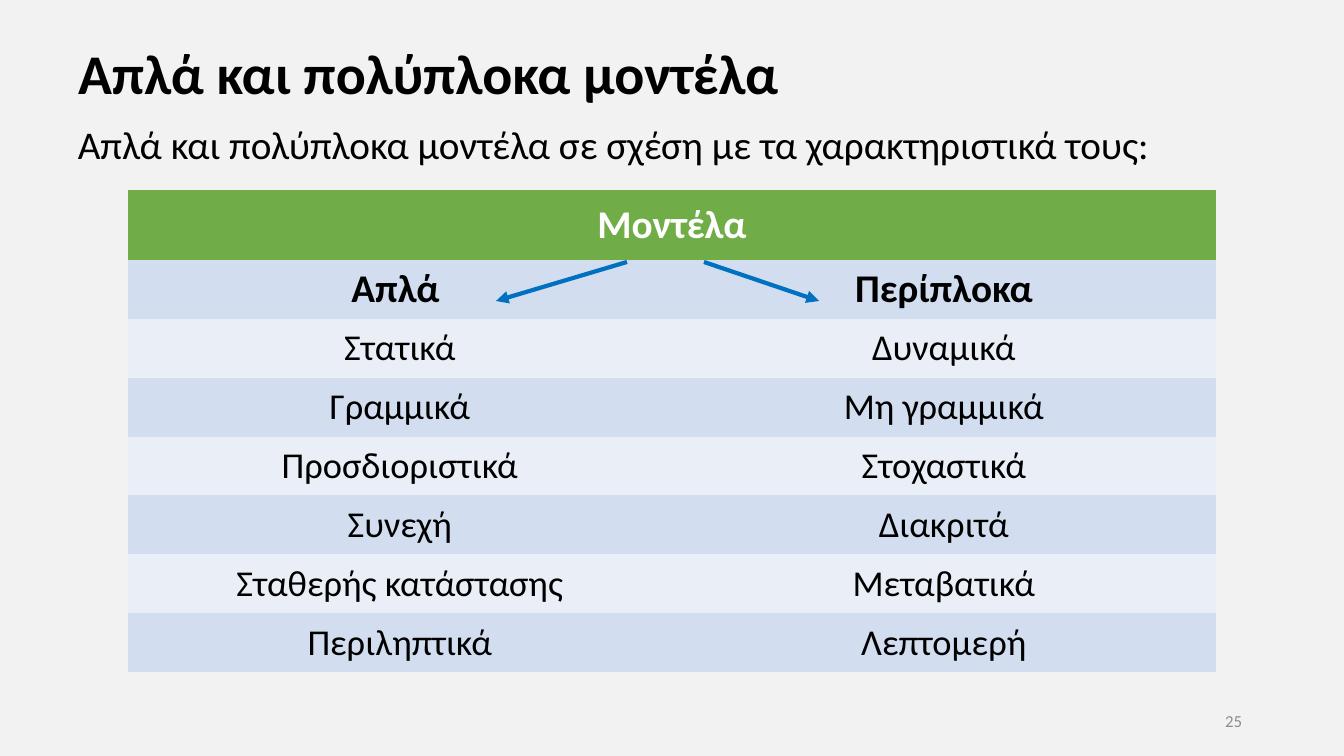
from dataclasses import dataclass

from lxml.etree import SubElement
from pptx import Presentation
from pptx.dml.color import RGBColor
from pptx.enum.shapes import MSO_CONNECTOR
from pptx.enum.text import MSO_ANCHOR, PP_ALIGN
from pptx.oxml.ns import qn
from pptx.util import Pt

TITLE = "Απλά και πολύπλοκα μοντέλα"
LEAD = "Απλά και πολύπλοκα μοντέλα σε σχέση με τα χαρακτηριστικά τους:"
PAGE = "25"
HEAD = "Μοντέλα"
ROWS = [
    ("Απλά ", "Περίπλοκα"),
    ("Στατικά", "Δυναμικά"),
    ("Γραμμικά", "Μη γραμμικά"),
    ("Προσδιοριστικά", "Στοχαστικά"),
    ("Συνεχή", "Διακριτά"),
    ("Σταθερής κατάστασης", "Μεταβατικά"),
    ("Περιληπτικά", "Λεπτομερή"),
]
ARROWS = [(627, 262, 496, 301), (704, 262, 819, 301)]
GRID = (128, 190, 1088, 482)
HEAD_H = 70
PLAIN = "{2D5ABB26-0587-4C30-8999-92F81FD0307C}"
SCALE = 12192000 / 1344


@dataclass(frozen=True)
class Theme:
    font: str = "Calibri"
    back: str = "F2F2F2"
    ink: str = "000000"
    white: str = "FFFFFF"
    gray: str = "8C8C8C"
    green: str = "70AD47"
    bands: tuple = ("D2DEEF", "EAEFF7")
    blue: str = "0070C0"
    title: int = 40
    lead: int = 28
    cell: int = 26
    page: int = 12
    line: int = 3


LOOK = Theme()


def px(*vals):
    return [round(v * SCALE) for v in vals]


def paint(fill, color):
    fill.solid()
    fill.fore_color.rgb = RGBColor.from_string(color)


def write(frame, text, size, color=LOOK.ink, bold=False, align=PP_ALIGN.LEFT):
    frame.text = text
    para = frame.paragraphs[0]
    para.alignment = align
    font = para.runs[0].font
    font.name, font.size, font.bold = LOOK.font, Pt(size), bold
    font.color.rgb = RGBColor.from_string(color)
    return para


def add_text(slide, box, anchor, *args, **style):
    frame = slide.shapes.add_textbox(*px(*box)).text_frame
    frame.word_wrap = True
    frame.vertical_anchor = anchor
    return write(frame, *args, **style)


def fill_cell(cell, text, size, color, bold, back):
    write(cell.text_frame, text, size, color, bold, PP_ALIGN.CENTER)
    cell.vertical_anchor = MSO_ANCHOR.MIDDLE
    paint(cell.fill, back)


def add_grid(slide):
    frame = slide.shapes.add_table(len(ROWS) + 1, 2, *px(*GRID))
    table = frame.table
    table.first_row = table.horz_banding = False
    table._tbl.tblPr.find(qn("a:tableStyleId")).text = PLAIN
    row_h = (GRID[3] - HEAD_H) / len(ROWS)
    for i, row in enumerate(table.rows):
        row.height = px(row_h if i else HEAD_H)[0]
    top = table.cell(0, 0)
    top.merge(table.cell(0, 1))
    fill_cell(top, HEAD, LOOK.lead, LOOK.white, True, LOOK.green)
    for i, row in enumerate(ROWS):
        size = LOOK.cell if i else LOOK.lead
        for j, text in enumerate(row):
            fill_cell(table.cell(i + 1, j), text, size, LOOK.ink, i == 0, LOOK.bands[i % 2])


def add_arrow(slide, ends):
    arrow = slide.shapes.add_connector(MSO_CONNECTOR.STRAIGHT, *px(*ends))
    arrow.line.width = Pt(LOOK.line)
    paint(arrow.line.fill, LOOK.blue)
    SubElement(arrow.line._get_or_add_ln(), qn("a:tailEnd"), type="triangle")
    SubElement(arrow._element.spPr, qn("a:effectLst"))


def main():
    deck = Presentation()
    deck.slide_width, deck.slide_height = px(1344, 756)
    slide = deck.slides.add_slide(deck.slide_layouts[5])
    paint(slide.background.fill, LOOK.back)

    title = slide.shapes.title
    title.left, title.top, title.width, title.height = px(68, 40, 1210, 73)
    title.text_frame.vertical_anchor = MSO_ANCHOR.MIDDLE
    write(title.text_frame, TITLE, LOOK.title, bold=True).line_spacing = 0.9

    lead = add_text(slide, (68, 121, 1210, 60), MSO_ANCHOR.TOP, LEAD, LOOK.lead)
    lead.line_spacing = 0.9
    add_text(slide, (950, 701, 302, 40), MSO_ANCHOR.MIDDLE, PAGE, LOOK.page,
             color=LOOK.gray, align=PP_ALIGN.RIGHT)
    add_grid(slide)
    for ends in ARROWS:
        add_arrow(slide, ends)
    deck.save("out.pptx")


if __name__ == "__main__":
    main()
